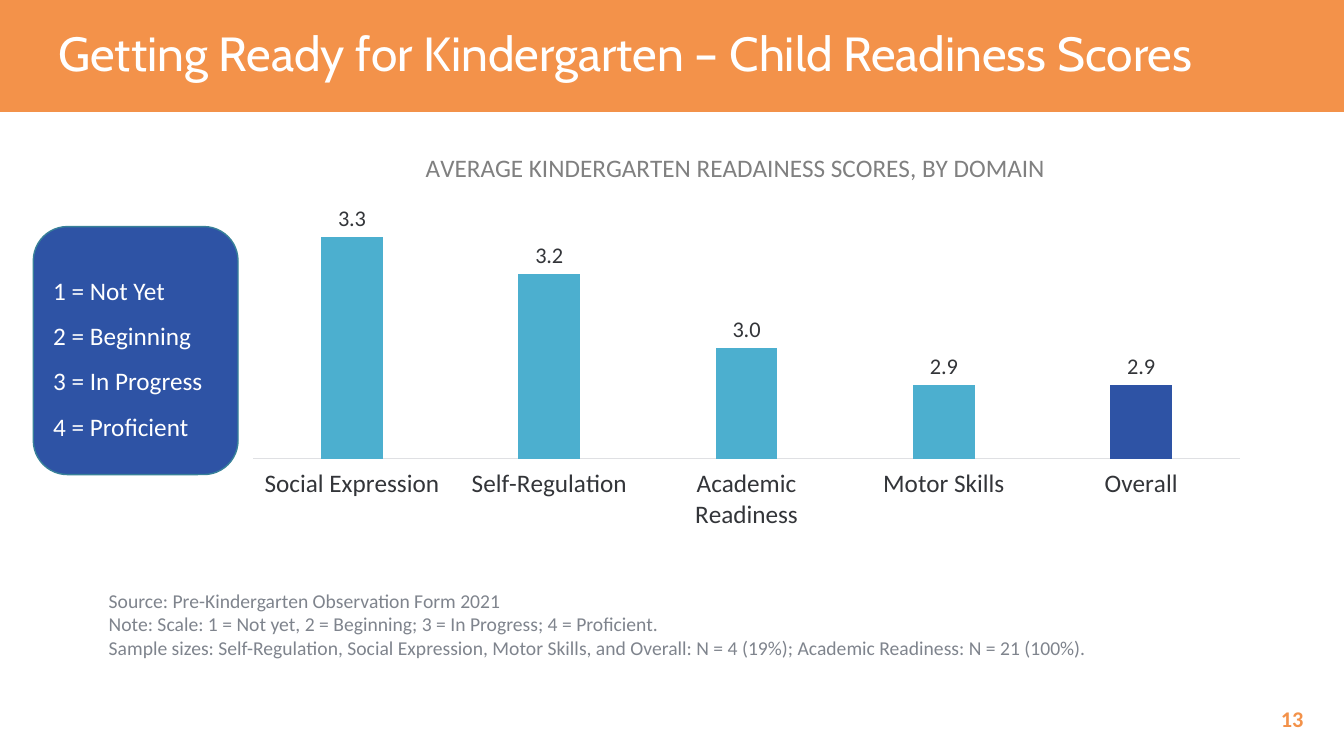
from lxml.etree import SubElement
from pptx import Presentation
from pptx.chart.data import CategoryChartData
from pptx.dml.color import RGBColor
from pptx.enum.chart import XL_CHART_TYPE, XL_LABEL_POSITION, XL_TICK_LABEL_POSITION, XL_TICK_MARK
from pptx.enum.shapes import MSO_SHAPE
from pptx.enum.text import MSO_ANCHOR, PP_ALIGN
from pptx.oxml.ns import qn
from pptx.util import Cm, Pt

COLORS = {
    "orange": "F3924A", "white": "FFFFFF", "teal": "4CAFCF", "blue": "2E53A5",
    "key_border": "388199", "text": "333539", "heading": "808080",
    "axis": "DFE0E3", "notes": "7F848D",
}
SCORES = {
    "Social Expression": 3.3, "Self-Regulation": 3.2, "Academic Readiness": 3.0,
    "Motor Skills": 2.9, "Overall": 2.9,
}
SCALE = ["1 = Not Yet", "2 = Beginning", "3 = In Progress", "4 = Proficient"]
NOTES = [
    "Source: Pre-Kindergarten Observation Form 2021\v"
    "Note: Scale: 1 = Not yet, 2 = Beginning; 3 = In Progress; 4 = Proficient.",
    "Sample sizes: Self-Regulation, Social Expression, Motor Skills, and Overall: "
    "N = 4 (19%); Academic Readiness: N = 21 (100%).",
]


def color(name):
    return RGBColor.from_string(COLORS[name])


def set_font(font, size, color_name, face="Calibri", bold=False):
    font.size, font.name, font.bold = Pt(size), face, bold
    font.color.rgb = color(color_name)


def set_layout(parent, **fractions):
    """Place a chart part by fractions of the chart area."""
    for old in parent.findall(qn("c:layout")):
        parent.remove(old)
    layout = SubElement(parent, qn("c:layout"))
    manual = SubElement(layout, qn("c:manualLayout"))
    if "w" in fractions:
        SubElement(manual, qn("c:layoutTarget")).set("val", "inner")
    for axis in "xy":
        SubElement(manual, qn(f"c:{axis}Mode")).set("val", "edge")
    for key, fraction in fractions.items():
        SubElement(manual, qn(f"c:{key}")).set("val", str(fraction))
    return layout


def add_header(slide, left, top, width, height):
    # Band behind the title
    band = slide.shapes.add_shape(MSO_SHAPE.RECTANGLE, left, top, width, height)
    band.shadow.inherit = False
    band.fill.solid()
    band.fill.fore_color.rgb = color("orange")
    band.line.fill.background()
    slide.shapes._spTree.insert(2, band._element)

    # Title
    title = slide.shapes.title
    title.left, title.top = left + Cm(1.22), top + Cm(0.69)
    title.width, title.height = width - Cm(2.52), Cm(1.45)
    title.text_frame.text = "Getting Ready for Kindergarten – Child Readiness Scores"
    title.text_frame.vertical_anchor = MSO_ANCHOR.MIDDLE
    heading = title.text_frame.paragraphs[0]
    heading.alignment = PP_ALIGN.LEFT
    heading.line_spacing = 0.9
    set_font(heading.font, 34.2, "white", "Cabin")


def add_scores_chart(slide, left, top, width, height):
    data = CategoryChartData(number_format="#,##0.0")
    data.categories = SCORES.keys()
    data.add_series("Series 1", SCORES.values())
    chart = slide.shapes.add_chart(
        XL_CHART_TYPE.COLUMN_CLUSTERED, left, top, width, height, data).chart
    chart.has_legend = False
    set_font(chart.font, 10, "text")

    # Chart heading
    heading = chart.chart_title.text_frame.paragraphs[0]
    heading.text = "AVERAGE KINDERGARTEN READAINESS SCORES, BY DOMAIN"
    set_font(heading.font, 18, "heading")
    title_element = chart.chart_title._element
    title_layout = set_layout(title_element, x=0.18, y=0.05)
    title_element.find(qn("c:tx")).addnext(title_layout)
    chart.chart_title.include_in_layout = False

    # Plot area and axes
    plot_area = chart._chartSpace.chart.plotArea
    plot_area.insert(0, set_layout(plot_area, x=0.015, y=0.158, w=0.97, h=0.508))
    domains, scores = chart.category_axis, chart.value_axis
    domains.major_tick_mark = XL_TICK_MARK.NONE
    domains.tick_label_position = XL_TICK_LABEL_POSITION.LOW
    domains.format.line.color.rgb = color("axis")
    domains.format.line.width = Pt(0.75)
    set_font(domains.tick_labels.font, 18, "text")
    scores.minimum_scale, scores.maximum_scale = 2.7, 3.4
    scores.has_major_gridlines = False
    scores.visible = False

    # Columns, with the overall score picked out
    plot = chart.plots[0]
    plot.gap_width, plot.overlap, plot.vary_by_categories = 219, -27, False
    columns = plot.series[0]
    overall = columns.points[len(SCORES) - 1]
    for column, fill in ((columns, "teal"), (overall, "blue")):
        column.format.fill.solid()
        column.format.fill.fore_color.rgb = color(fill)
    labels = columns.data_labels
    labels.show_value = True
    labels.position = XL_LABEL_POSITION.OUTSIDE_END
    labels.number_format, labels.number_format_is_linked = "#,##0.0", False
    set_font(labels.font, 16, "text")


def add_scale_key(slide, left, top, width, height):
    key = slide.shapes.add_shape(MSO_SHAPE.ROUNDED_RECTANGLE, left, top, width, height)
    key.shadow.inherit = False
    key.fill.solid()
    key.fill.fore_color.rgb = color("blue")
    key.line.color.rgb = color("key_border")
    key.line.width = Pt(1)
    key.text_frame.text = "\n".join(SCALE)
    key.text_frame.vertical_anchor = MSO_ANCHOR.MIDDLE
    for level in key.text_frame.paragraphs:
        level.alignment = PP_ALIGN.LEFT
        level.line_spacing = 1.5
        set_font(level.font, 18, "white")


def add_notes(slide, left, top, width, height):
    notes = slide.shapes.add_textbox(left, top, width, height).text_frame
    notes.word_wrap = True
    notes.text = "\n".join(NOTES)
    for note in notes.paragraphs:
        properties = note._p.get_or_add_pPr()
        properties.set("marL", str(Cm(0.51)))
        properties.set("indent", "0")
        set_font(note.font, 14, "notes")


def add_page_number(slide, left, top, width, height):
    page = slide.shapes.add_textbox(left, top, width, height).text_frame
    page.word_wrap = True
    page.vertical_anchor = MSO_ANCHOR.MIDDLE
    page.text = "13"
    number = page.paragraphs[0]
    number.alignment = PP_ALIGN.RIGHT
    set_font(number.font, 16, "orange", bold=True)


def main():
    prs = Presentation()
    prs.slide_width, prs.slide_height = Cm(33.87), Cm(19.05)
    slide = prs.slides.add_slide(prs.slide_layouts[5])
    add_header(slide, 0, 0, prs.slide_width, Cm(2.82))
    add_scores_chart(slide, Cm(6), Cm(3.02), Cm(25.63), Cm(12.83))
    add_scale_key(slide, Cm(0.84), Cm(5.71), Cm(5.16), Cm(6.25))
    add_notes(slide, Cm(1.98), Cm(14.71), Cm(28.96), Cm(2.06))
    add_page_number(slide, Cm(25.48), Cm(17.6), Cm(7.62), Cm(1.02))
    prs.save("out.pptx")


if __name__ == "__main__":
    main()
